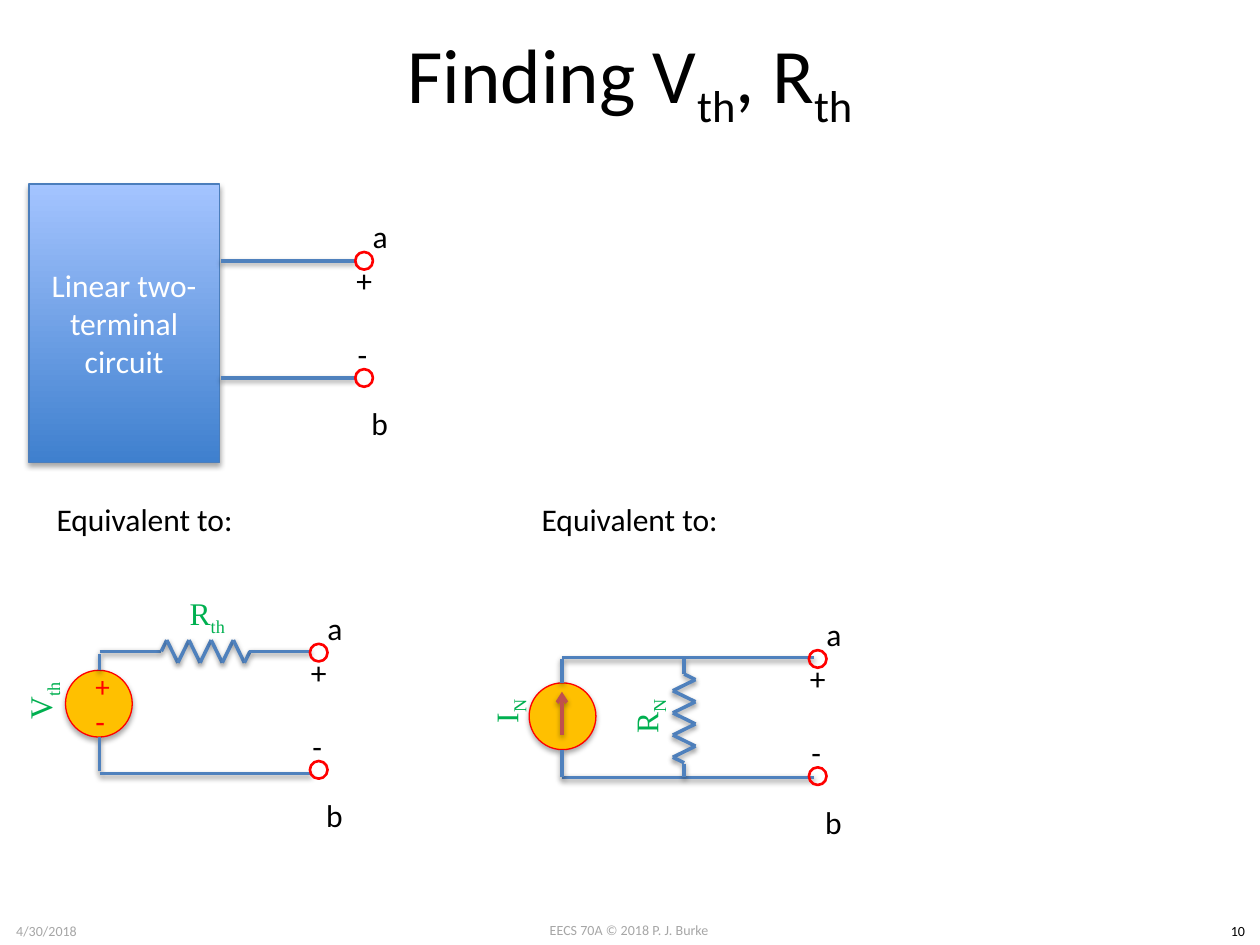
from dataclasses import dataclass
from itertools import pairwise
from typing import NamedTuple

from pptx import Presentation
from pptx import util as u
from pptx.dml import color
from pptx.enum import shapes, text
from pptx.oxml import xmlchemy as xc


@dataclass(frozen=True)
class Theme:
    sans: str = "Calibri"
    serif: str = "Times New Roman"
    ink: str = "000000"
    pale: str = "FFFFFF"
    gray: str = "A6A6A6"
    red: str = "FF0000"
    green: str = "00B050"
    gold: str = "FFC000"
    wire: str = "4F81BD"
    arrow: str = "C0504D"
    edge: str = "4B7EBC"
    deep: str = "3F80CE"
    light: str = "A4C4FF"
    title: float = 44
    body: float = 18
    plus: float = 16.6
    foot: float = 8
    thick: float = 2
    ring: float = 1.5
    thin: float = 0.75


class Box(NamedTuple):
    x: float
    y: float
    w: float
    h: float


class Label(NamedTuple):
    box: Box
    runs: tuple[str, ...]
    tint: str
    size: float = 18
    face: str = "Calibri"
    mid: bool = True
    turn: float = 0


Point = tuple[float, float]
T = Theme()
COLS, ROWS = 100, 75
WIDE, HIGH = u.Inches(10), u.Inches(7.5)

deck = Presentation()
deck.slide_width, deck.slide_height = WIDE, HIGH
slide = deck.slides.add_slide(deck.slide_layouts[6])


def col(n: float) -> int:
    return round(WIDE * n / COLS)


def row(n: float) -> int:
    return round(HIGH * n / ROWS)


def place(box: Box) -> tuple[int, int, int, int]:
    return col(box.x), row(box.y), col(box.w), row(box.h)


def rgb(tint: str) -> color.RGBColor:
    return color.RGBColor.from_string(tint)


def node(tag: str, **attrs: str):
    item = xc.OxmlElement(tag)
    for key, value in attrs.items():
        item.set(key, value)
    return item


def shade(props, blur: float, gap: float, alpha: int) -> None:
    for old in props.findall(xc.qn("a:effectLst")):
        props.remove(old)
    drop = node("a:outerShdw", blurRad=str(u.Pt(blur)), dist=str(u.Pt(gap)),
                dir="5400000", rotWithShape="0")
    ink = node("a:srgbClr", val=T.ink)
    ink.append(node("a:alpha", val=str(alpha * 1000)))
    drop.append(ink)
    effects = node("a:effectLst")
    effects.append(drop)
    props.append(effects)


def write(frame, label: Label) -> None:
    frame.word_wrap = label.mid
    frame.vertical_anchor = text.MSO_ANCHOR.MIDDLE
    para = frame.paragraphs[0]
    para.alignment = text.PP_ALIGN.CENTER if label.mid else text.PP_ALIGN.LEFT
    for i, words in enumerate(label.runs):
        run = para.add_run()
        run.text = words
        run.font.name, run.font.size = label.face, u.Pt(label.size)
        run.font.color.rgb = rgb(label.tint)
        if i % 2:
            run._r.get_or_add_rPr().set("baseline", "-25000")


def note(label: Label) -> None:
    item = slide.shapes.add_textbox(*place(label.box))
    item.rotation = label.turn
    write(item.text_frame, label)


def wire(start: Point, end: Point, tint: str = T.wire, tip: bool = False) -> None:
    line = slide.shapes.add_connector(
        shapes.MSO_CONNECTOR.STRAIGHT,
        col(start[0]), row(start[1]), col(end[0]), row(end[1]))
    line.line.color.rgb = rgb(tint)
    line.line.width = u.Pt(T.thick)
    if tip:
        line.line._get_or_add_ln().append(node("a:tailEnd", type="arrow"))
    shade(line._element.spPr, 3.1, 1.6, 38)


def trace(*points: Point) -> None:
    for start, end in pairwise(points):
        wire(start, end)


def shape(kind: shapes.MSO_SHAPE, box: Box, edge: str, width: float):
    item = slide.shapes.add_shape(kind, *place(box))
    item.shadow.inherit = False
    item.line.color.rgb = rgb(edge)
    item.line.width = u.Pt(width)
    return item


def source(x: float, y: float) -> None:
    item = shape(shapes.MSO_SHAPE.OVAL, Box(x, y, 5.3, 5.3), T.red, T.thin)
    item.fill.solid()
    item.fill.fore_color.rgb = rgb(T.gold)
    shade(item._element.spPr, 3.1, 1.8, 35)


def zigzag(x: float, y: float, down: bool = False) -> None:
    step, reach = 0.88, 0.9
    bends = [((k + 0.5) * step, reach * (-1) ** k) for k in range(8)]
    marks = [(0, 0), *bends, (8 * step, 0)]
    trace(*((x + c, y + a) if down else (x + a, y - c) for a, c in marks))


def port(x: float, y: float) -> None:
    for drop in (0, 9.3):
        ring = shape(shapes.MSO_SHAPE.OVAL, Box(x, y + drop, 1.4, 1.4), T.red, T.ring)
        ring.fill.background()
    for sign, dx, dy, w in (("a", 0.4, -3.3, 3.2), ("b", 0.3, 11.6, 3.4),
                            ("+", -0.9, 0.2, 3.3), ("-", -0.8, 6.1, 2.8)):
        note(Label(Box(x + dx, y + dy, w, 4), (sign,), T.ink, mid=False))


def part(x: float, y: float, name: str, sub: str, turn: float = 270) -> None:
    note(Label(Box(x, y, 11.9, 7.3), (name, sub), T.green, T.body, T.serif, turn=turn))


def header() -> None:
    note(Label(Box(38.3, 72.6, 23.3, 2.4), ("EECS 70A © 2018 P. J. Burke",), T.gray, T.foot))
    note(Label(Box(0, 72.7, 7.4, 2.4), ("4/30/2018",), T.gray, T.foot))
    note(Label(Box(96.5, 72.7, 3.5, 2.4), ("10",), T.ink, T.foot))
    note(Label(Box(5, 0, 90, 12.5), ("Finding V", "th", ", R", "th"), T.ink, T.title))
    for x in (3.5, 42):
        note(Label(Box(x, 39.2, 16.2, 4), ("Equivalent to:",), T.ink, mid=False))


def linear() -> None:
    box = Box(2.3, 14.6, 15.1, 22.1)
    block = shape(shapes.MSO_SHAPE.RECTANGLE, box, T.edge, T.thin)
    block.fill.gradient()
    block.fill.gradient_angle = 90
    for stop, tint in zip(block.fill.gradient_stops, (T.deep, T.light)):
        stop.color.rgb = rgb(tint)
    shade(block._element.spPr, 3.1, 1.8, 35)
    write(block.text_frame, Label(box, ("Linear two-terminal circuit",), T.pale))
    for y in (20.7, 30):
        wire((17.5, y), (28.2, y))
    port(28.2, 20)


def thevenin() -> None:
    part(10.5, 45.2, "R", "th", 0)
    wire((7.9, 51.7), (12.8, 51.7))
    zigzag(12.8, 51.7)
    wire((19.8, 51.7), (24.7, 51.7))
    source(5.2, 53.2)
    note(Label(Box(6.6, 52.8, 2.6, 3.3), ("+",), T.red, T.plus))
    note(Label(Box(6.6, 55.6, 2.6, 3.3), ("-",), T.red))
    wire((7.9, 61.2), (7.9, 58.5))
    wire((7.9, 53.2), (7.9, 51.9))
    part(-2.6, 52, "V", "th")
    wire((7.9, 61.4), (24.7, 61.4))
    port(24.6, 51.1)


def norton() -> None:
    for y in (61.7, 52.2):
        wire((44.6, y), (64.6, y))
    part(45.5, 53.2, "R", "N")
    wire((54.3, 52.3), (54.3, 53.5))
    zigzag(54.3, 53.5, down=True)
    wire((54.3, 60.6), (54.3, 61.7))
    source(42, 54.2)
    wire((44.6, 58.3), (44.6, 54.9), T.arrow, tip=True)
    wire((44.6, 54.2), (44.6, 52.3))
    wire((44.6, 59.5), (44.6, 61.7))
    part(34.4, 52.8, "I", "N")
    port(64.2, 51.6)


header()
linear()
thevenin()
norton()
deck.save("out.pptx")
